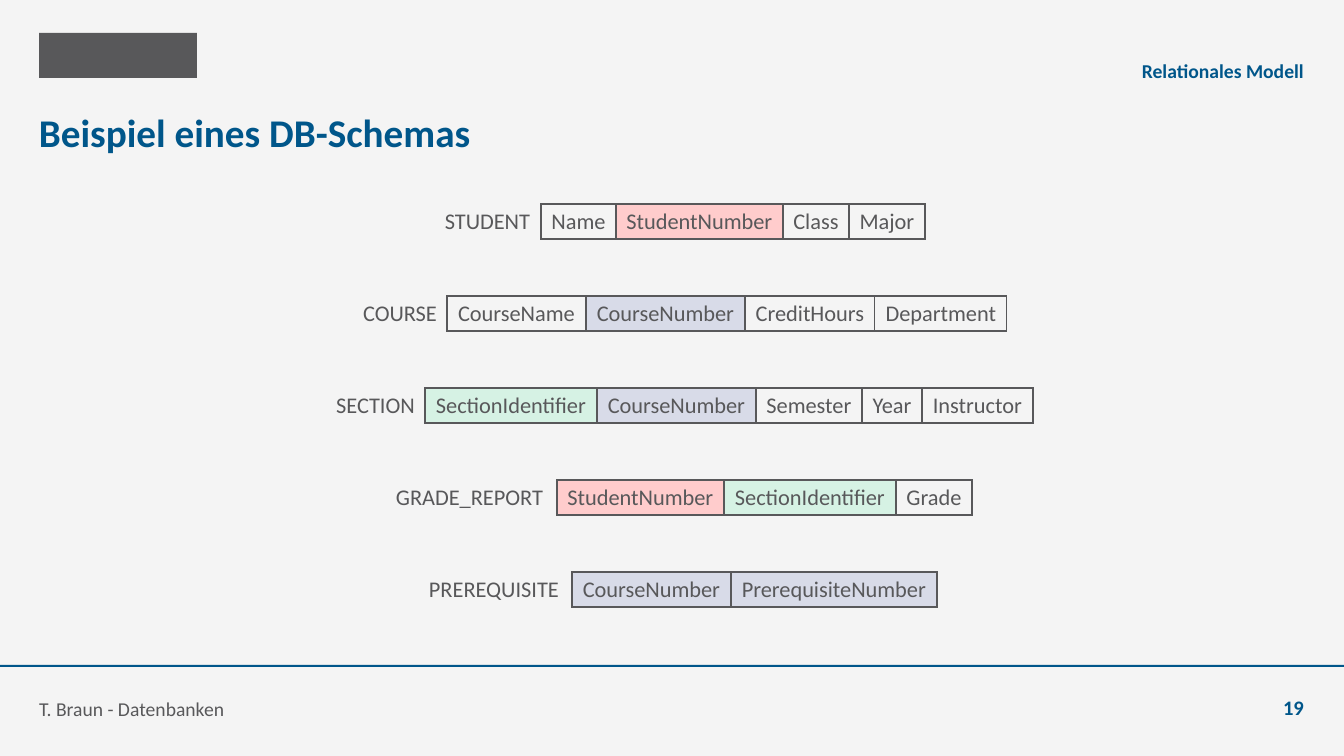
from lxml.etree import SubElement
from pptx import Presentation
from pptx.dml.color import RGBColor as Rgb
from pptx.enum.shapes import MSO_SHAPE as Shape
from pptx.enum.text import MSO_ANCHOR as Anchor, PP_ALIGN as Align
from pptx.oxml import parse_xml
from pptx.oxml.ns import nsdecls, qn
from pptx.util import Emu, Inches, Pt

SCALE = Inches(7.5) / 756
COLORS = {
    "back": "F4F4F4", "blue": "00568A", "gray": "58585A",
    "red": "FFCCCC", "lilac": "D8DBE8", "green": "D6F2E4",
}
KEYS = {
    "StudentNumber": "red", "SectionIdentifier": "green",
    "CourseNumber": "lilac", "PrerequisiteNumber": "lilac",
}
SCHEMA = [
    (434, Align.CENTER, [("STUDENT", 107), ("Name", 75), ("StudentNumber", 167),
                         ("Class", 66), ("Major", 76)]),
    (353, Align.CENTER, [("COURSE", 94), ("CourseName", 139), ("CourseNumber", 159),
                         ("CreditHours", 130), ("Department", 132)]),
    (326, Align.CENTER, [("SECTION", 99), ("SectionIdentifier", 172),
                         ("CourseNumber", 159), ("Semester", 106), ("Year", 60),
                         ("Instructor", 111)]),
    (388, Align.LEFT, [("GRADE_REPORT", 169), ("StudentNumber", 167),
                       ("SectionIdentifier", 172), ("Grade", 76)]),
    (421, Align.LEFT, [("PREREQUISITE", 151), ("CourseNumber", 159),
                       ("PrerequisiteNumber", 206)]),
]


def px(num):
    """Turn pixels into EMU."""
    return Emu(round(num * SCALE))


def color(name):
    """Look up a named colour."""
    return Rgb.from_string(COLORS[name])


def write(frame, text, size=14, tone="gray", bold=False, align=Align.LEFT):
    """Write one formatted paragraph into a text frame."""
    par = frame.paragraphs[0]
    par.alignment = align
    run = par.add_run()
    run.text = text
    font = run.font
    font.name, font.size, font.bold = "Calibri", Pt(size), bold
    font.color.rgb = color(tone)


def label(slide, box, text, anchor=Anchor.BOTTOM, **style):
    """Add a text box without insets."""
    frame = slide.shapes.add_textbox(*map(px, box)).text_frame
    frame.margin_left = frame.margin_right = 0
    frame.margin_top = frame.margin_bottom = 0
    frame.word_wrap = True
    frame.vertical_anchor = anchor
    write(frame, text, **style)


def block(slide, box, tone):
    """Add a plain filled rectangle."""
    rect = slide.shapes.add_shape(Shape.RECTANGLE, *map(px, box))
    rect.shadow.inherit = False
    rect.fill.solid()
    rect.fill.fore_color.rgb = color(tone)
    rect.line.fill.background()


def border(cell, sides):
    """Draw the given sides of a cell and hide the others."""
    props = cell._tc.get_or_add_tcPr()
    for spot, side in enumerate("LRTB"):
        line = parse_xml(f'<a:ln{side} {nsdecls("a")} w="{Pt(1)}"/>')
        if side in sides:
            fill = SubElement(line, qn("a:solidFill"))
            SubElement(fill, qn("a:srgbClr"), val=COLORS["gray"])
        else:
            SubElement(line, qn("a:noFill"))
        props.insert(spot, line)


def relation(slide, box, cells, align):
    """Draw a relation as a name cell followed by attribute cells."""
    table = slide.shapes.add_table(1, len(cells), *map(px, box)).table
    table.first_row = table.horz_banding = False
    table.rows[0].height = px(box[3])
    for col, (text, width) in enumerate(cells):
        table.columns[col].width = px(width)
        cell = table.cell(0, col)
        cell.margin_left = cell.margin_right = px(8)
        cell.margin_top = cell.margin_bottom = px(4)
        if text in KEYS:
            cell.fill.solid()
            cell.fill.fore_color.rgb = color(KEYS[text])
        else:
            cell.fill.background()
        border(cell, "LRTB" if col else "R")
        write(cell.text_frame, text, size=16, align=Align.CENTER if col else align)


def header(slide, box):
    """Place the emblem block, chapter and title."""
    left, top, width, _ = box
    block(slide, (left, top, 158, 45), "gray")
    label(slide, (left + 357, top + 10, width - 357, 39), "Relationales Modell",
          tone="blue", bold=True, align=Align.RIGHT)
    label(slide, (left, top + 67, width, 63), "Beispiel eines DB-Schemas",
          anchor=Anchor.MIDDLE, size=28, tone="blue", bold=True)


def schema(slide, top, step):
    """Stack the relations at equal steps."""
    for row, (left, align, cells) in enumerate(SCHEMA):
        width = sum(size for _, size in cells)
        relation(slide, (left, top + row * step, width, 35), cells, align)


def footer(slide, box):
    """Place the rule, author line and page number."""
    left, top, width, height = box
    block(slide, (0, top - 15, 1344, 2), "blue")
    label(slide, (left, top, 927, height), "T. Braun - Datenbanken")
    label(slide, (left + width - 80, top, 80, height), "19",
          size=14.7, tone="blue", bold=True, align=Align.RIGHT)


def main():
    """Build and save the slide."""
    deck = Presentation()
    deck.slide_width, deck.slide_height = px(1344), px(756)
    slide = deck.slides.add_slide(deck.slide_layouts[6])
    slide.background.fill.solid()
    slide.background.fill.fore_color.rgb = color("back")
    header(slide, (39, 33, 1265, 130))
    schema(slide, 204, 92)
    footer(slide, (39, 680, 1265, 40))
    deck.save("out.pptx")


if __name__ == "__main__":
    main()
